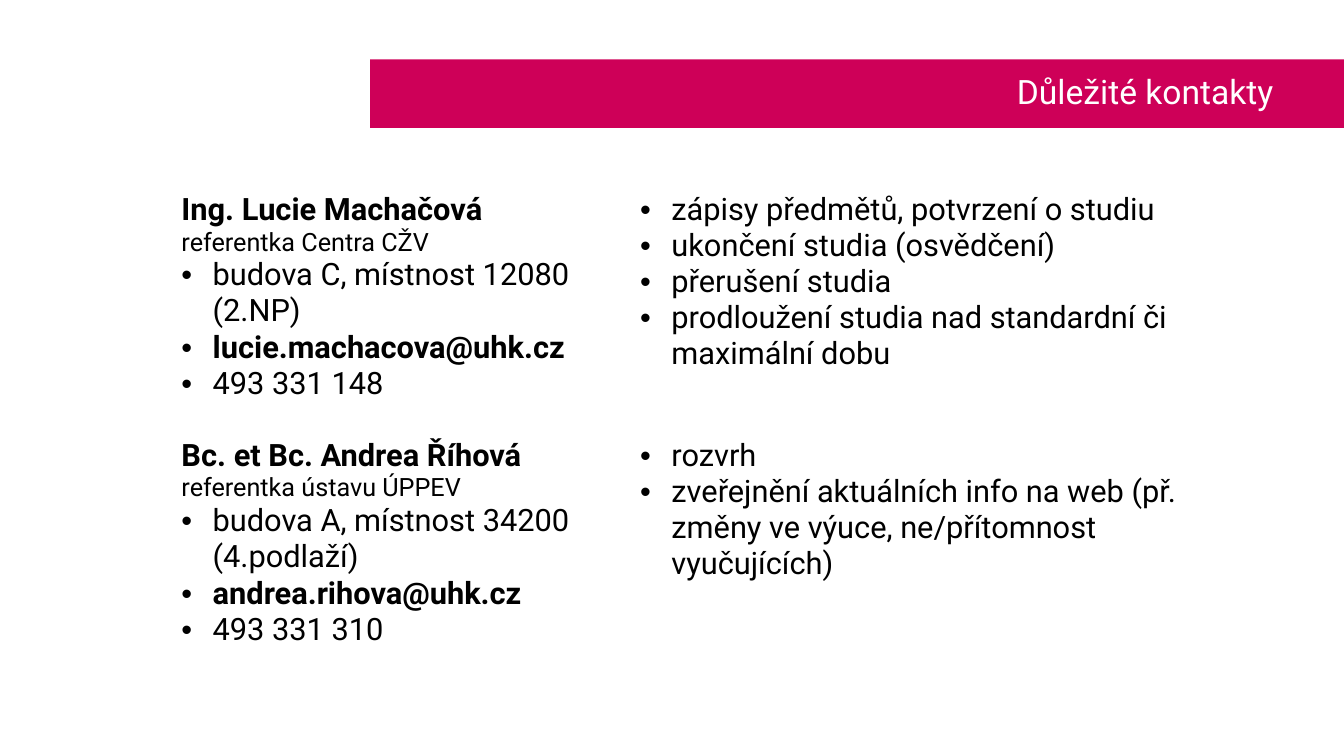
from lxml import etree
from pptx import Presentation
from pptx.dml.color import RGBColor
from pptx.enum.text import MSO_ANCHOR, PP_ALIGN
from pptx.oxml.ns import qn
from pptx.util import Inches, Pt

MIDDLE = MSO_ANCHOR.MIDDLE
RIGHT = PP_ALIGN.RIGHT
TITLE_ONLY = 5

CRIMSON = RGBColor(0xCE, 0x00, 0x58)
WHITE = RGBColor(0xFF, 0xFF, 0xFF)
BLACK = RGBColor(0x00, 0x00, 0x00)

FONT = "Roboto"
TITLE_SIZE, TEXT_SIZE, ROLE_SIZE = 24, 22, 18
SLIDE_WIDTH, SLIDE_HEIGHT = 13.33, 7.5
BAND_LEFT, BAND_TOP, BAND_HEIGHT = 3.67, 0.59, 0.68
TABLE_LEFT, TABLE_TOP = 1.7, 1.85
COLUMN_WIDTHS = (4.55, 6.38)
ROW_HEIGHTS = (2.44, 2.63)
BULLET_INDENT = 0.31

CONTACTS = [
    {
        "name": "Ing. Lucie Machačová",
        "role": "referentka Centra CŽV",
        "room": "budova C, místnost 12080 (2.NP)",
        "email": "lucie.machacova@uhk.cz",
        "phone": "493 331 148",
        "agenda": [
            "zápisy předmětů, potvrzení o studiu",
            "ukončení studia (osvědčení)",
            "přerušení studia",
            "prodloužení studia nad standardní či maximální dobu",
        ],
    },
    {
        "name": "Bc. et Bc. Andrea Říhová",
        "role": "referentka ústavu ÚPPEV",
        "room": "budova A, místnost 34200 (4.podlaží)",
        "email": "andrea.rihova@uhk.cz",
        "phone": "493 331 310",
        "agenda": [
            "rozvrh",
            "zveřejnění aktuálních info na web (př. změny ve výuce, ne/přítomnost vyučujících)",
        ],
    },
]


def add_run(paragraph, text, size, color, bold=False):
    """Append one formatted run to a paragraph."""
    run = paragraph.add_run()
    run.text = text
    run.font.name = FONT
    run.font.size = Pt(size)
    run.font.bold = bold
    run.font.color.rgb = color


def add_bullet(paragraph):
    """Give a paragraph a round bullet with a hanging indent."""
    properties = paragraph._p.get_or_add_pPr()
    properties.set("marL", str(Inches(BULLET_INDENT)))
    properties.set("indent", str(-Inches(BULLET_INDENT)))
    etree.SubElement(properties, qn("a:buFont")).set("typeface", "Arial")
    etree.SubElement(properties, qn("a:buChar")).set("char", "•")


def fill_cell(cell, lines):
    """Write (text, size, bold, bulleted) lines into a white cell."""
    cell.fill.solid()
    cell.fill.fore_color.rgb = WHITE
    frame = cell.text_frame
    for number, (text, size, bold, bulleted) in enumerate(lines):
        paragraph = frame.add_paragraph() if number else frame.paragraphs[0]
        if bulleted:
            add_bullet(paragraph)
        add_run(paragraph, text, size, BLACK, bold)


def add_title_band(slide, text):
    """Turn the title placeholder into a band reaching the right edge."""
    title = slide.shapes.title
    title.left, title.top = Inches(BAND_LEFT), Inches(BAND_TOP)
    title.width = Inches(SLIDE_WIDTH - BAND_LEFT)
    title.height = Inches(BAND_HEIGHT)
    title.fill.solid()
    title.fill.fore_color.rgb = CRIMSON
    frame = title.text_frame
    frame.vertical_anchor = MIDDLE
    frame.margin_left, frame.margin_right = Inches(0.59), Inches(0.7)
    frame.margin_top = frame.margin_bottom = Inches(0.05)
    paragraph = frame.paragraphs[0]
    paragraph.alignment = RIGHT
    paragraph.line_spacing = 0.9
    add_run(paragraph, text, TITLE_SIZE, WHITE)


def add_contact_table(slide, contacts):
    """Add a table with one row per contact: details and agenda."""
    table = slide.shapes.add_table(
        len(contacts), len(COLUMN_WIDTHS),
        Inches(TABLE_LEFT), Inches(TABLE_TOP),
        Inches(sum(COLUMN_WIDTHS)), Inches(sum(ROW_HEIGHTS)),
    ).table
    table.first_row = table.horz_banding = False
    for column, width in zip(table.columns, COLUMN_WIDTHS):
        column.width = Inches(width)
    for row, height, contact in zip(table.rows, ROW_HEIGHTS, contacts):
        row.height = Inches(height)
        details, agenda = row.cells
        fill_cell(details, [
            (contact["name"], TEXT_SIZE, True, False),
            (contact["role"], ROLE_SIZE, False, False),
            (contact["room"], TEXT_SIZE, False, True),
            (contact["email"], TEXT_SIZE, True, True),
            (contact["phone"], TEXT_SIZE, False, True),
        ])
        fill_cell(agenda, [(duty, TEXT_SIZE, False, True) for duty in contact["agenda"]])


def main():
    """Build the contacts slide and save it."""
    presentation = Presentation()
    presentation.slide_width = Inches(SLIDE_WIDTH)
    presentation.slide_height = Inches(SLIDE_HEIGHT)
    slide = presentation.slides.add_slide(presentation.slide_layouts[TITLE_ONLY])
    add_title_band(slide, "Důležité kontakty")
    add_contact_table(slide, CONTACTS)
    presentation.save("out.pptx")


if __name__ == "__main__":
    main()
